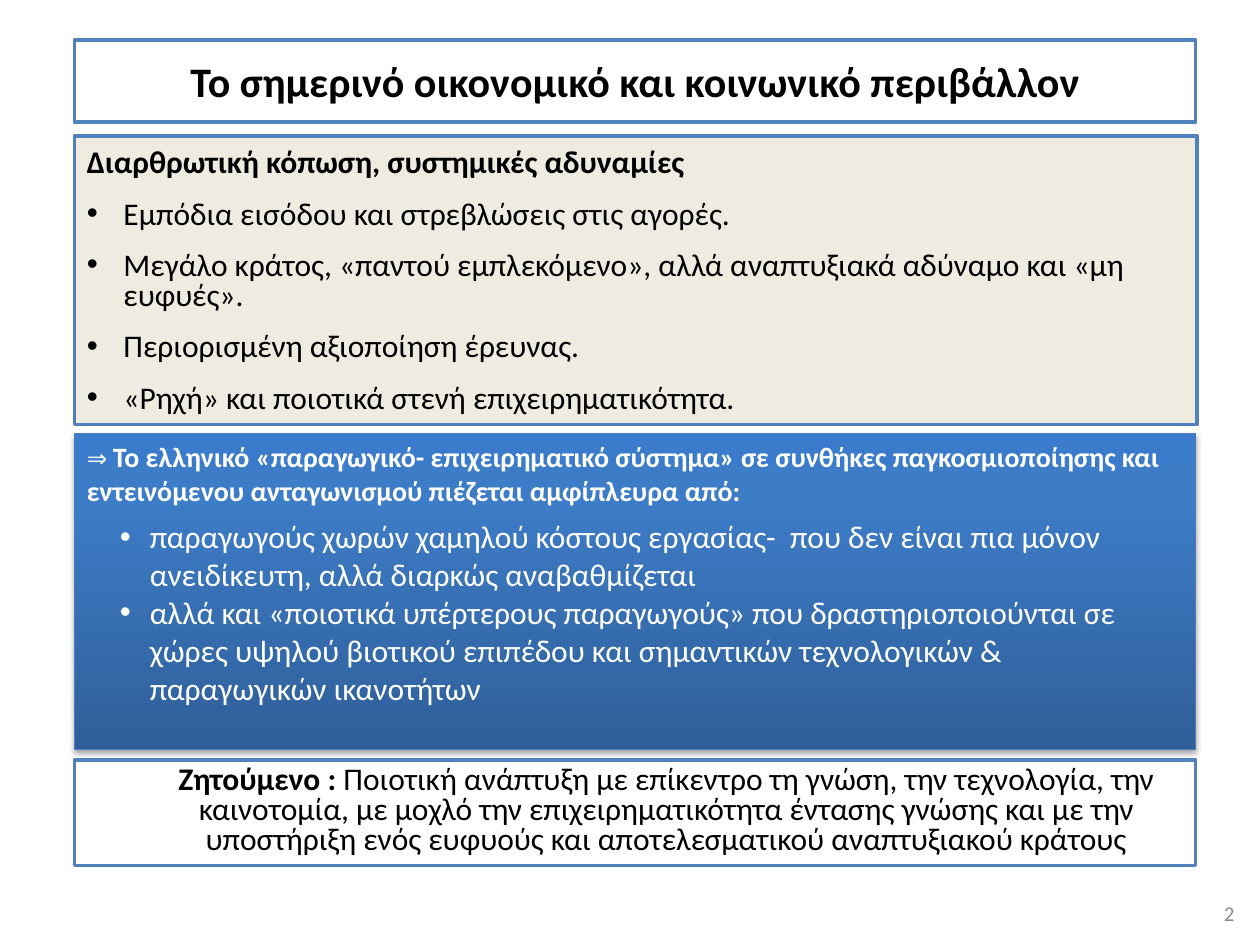
from copy import deepcopy

from lxml.etree import SubElement
from pptx import Presentation
from pptx.dml.color import RGBColor
from pptx.enum.shapes import MSO_SHAPE
from pptx.enum.text import MSO_ANCHOR, MSO_AUTO_SIZE, PP_ALIGN
from pptx.oxml.ns import qn
from pptx.util import Cm, Pt

LEFT, WIDTH = 1.5, 22.6
SPACED = {"space_before": Pt(6), "space_after": Pt(6)}
TIGHT = {"line_spacing": 0.8}
CENTRED = {"alignment": PP_ALIGN.CENTER}


def color(value):
    return RGBColor.from_string(value)


def set_values(target, values):
    for name, value in values.items():
        setattr(target, name, value)


def place(shape, left, top, width, height):
    set_values(shape, {"left": Cm(left), "top": Cm(top),
                       "width": Cm(width), "height": Cm(height)})


def set_border(shape, line_color, width):
    shape.line.color.rgb = color(line_color)
    shape.line.width = Pt(width)


def set_fill(shape, fill_color):
    shape.fill.solid()
    shape.fill.fore_color.rgb = color(fill_color)


def set_frame(shape, anchor=MSO_ANCHOR.TOP):
    set_values(shape.text_frame, {"word_wrap": True, "vertical_anchor": anchor,
                                  "auto_size": MSO_AUTO_SIZE.NONE})


def add_box(slide, top, height, width=WIDTH):
    shape = slide.shapes.add_shape(MSO_SHAPE.RECTANGLE, Cm(LEFT), Cm(top), Cm(width), Cm(height))
    shape.shadow.inherit = False
    set_frame(shape)
    return shape


def set_gradient(shape, stops, angle):
    shape.fill.gradient()
    shape.fill.gradient_angle = angle
    stop_list = shape._element.spPr.find(".//" + qn("a:gsLst"))
    while len(stop_list) < len(stops):
        stop_list.append(deepcopy(stop_list[0]))
    for stop, (position, value) in zip(shape.fill.gradient_stops, stops):
        stop.position = position
        stop.color.rgb = color(value)


def add_shadow(shape):
    effects = shape._element.spPr.find(qn("a:effectLst"))
    shadow = SubElement(effects, qn("a:outerShdw"), blurRad=str(Pt(3.1)), dist=str(Pt(1.8)),
                        dir="5400000", rotWithShape="0")
    shade = SubElement(shadow, qn("a:srgbClr"), val="000000")
    SubElement(shade, qn("a:alpha"), val="35000")


def add_paragraph(shape, runs, text_color, values, margin=0, indent=0, bullet=False):
    frame = shape.text_frame
    paragraph = frame.paragraphs[0]
    if paragraph.runs:
        paragraph = frame.add_paragraph()
    set_values(paragraph, {"alignment": PP_ALIGN.LEFT, **values})
    properties = paragraph._p.get_or_add_pPr()
    properties.set("marL", str(Cm(margin)))
    properties.set("indent", str(Cm(indent)))
    if bullet:
        SubElement(properties, qn("a:buFont"), typeface="Arial")
        SubElement(properties, qn("a:buChar"), char="•")
    for text, size, bold in runs:
        run = paragraph.add_run()
        run.text = text
        set_values(run.font, {"name": "Calibri", "size": Pt(size), "bold": bold})
        run.font.color.rgb = color(text_color)


def add_title(slide):
    title = slide.shapes.title
    place(title, LEFT, 0.81, WIDTH, 1.65)
    set_fill(title, "FFFFFF")
    set_border(title, "4F81BD", 2)
    set_frame(title, MSO_ANCHOR.MIDDLE)
    add_paragraph(title, [("Το σημερινό οικονομικό και κοινωνικό περιβάλλον", 24, True)],
                  "000000", CENTRED)


def add_weaknesses(slide):
    box = add_box(slide, 2.74, 5.82, 22.63)
    set_fill(box, "EEECE1")
    set_border(box, "4F81BD", 2)
    add_paragraph(box, [("Διαρθρωτική κόπωση, συστημικές αδυναμίες", 18, True)], "000000", SPACED)
    for text in (
        "Εμπόδια εισόδου και στρεβλώσεις στις αγορές.",
        "Μεγάλο κράτος, «παντού εμπλεκόμενο», αλλά αναπτυξιακά αδύναμο και «μη ευφυές».",
        "Περιορισμένη αξιοποίηση έρευνας.",
        "«Ρηχή» και ποιοτικά στενή επιχειρηματικότητα.",
    ):
        add_paragraph(box, [(text, 18, False)], "000000", {**SPACED, **TIGHT}, 0.74, -0.74, True)


def add_pressures(slide):
    box = add_box(slide, 8.74, 6.37)
    set_gradient(box, [(0, "2F5F99"), (0.8, "3D7CC7"), (1, "3A7CCB")], 90)
    set_border(box, "4B7EBC", 0.75)
    add_shadow(box)
    add_paragraph(box, [
        ("⇒ ", 14, False),
        ("Το ελληνικό «παραγωγικό- επιχειρηματικό σύστημα» σε συνθήκες παγκοσμιοποίησης "
         "και εντεινόμενου ανταγωνισμού πιέζεται αμφίπλευρα από:", 16, True),
    ], "FFFFFF", SPACED)
    for text in (
        "παραγωγούς χωρών χαμηλού κόστους εργασίας-  που δεν είναι πια μόνον ανειδίκευτη, "
        "αλλά διαρκώς αναβαθμίζεται",
        "αλλά και «ποιοτικά υπέρτερους παραγωγούς» που δραστηριοποιούνται σε χώρες υψηλού "
        "βιοτικού επιπέδου και σημαντικών τεχνολογικών & παραγωγικών ικανοτήτων",
    ):
        add_paragraph(box, [(text, 18, False)], "FFFFFF", {"level": 2}, 1.27, -0.6, True)


def add_goal(slide):
    box = add_box(slide, 15.32, 2.13)
    set_fill(box, "FFFFFF")
    set_border(box, "4F81BD", 2)
    add_paragraph(box, [
        ("Ζητούμενο : ", 18, True),
        ("Ποιοτική ανάπτυξη με επίκεντρο τη γνώση, την τεχνολογία, την καινοτομία, με μοχλό "
         "την επιχειρηματικότητα έντασης γνώσης και με την υποστήριξη ενός ευφυούς και "
         "αποτελεσματικού αναπτυξιακού κράτους", 18, False),
    ], "000000", {**CENTRED, **TIGHT, "level": 1}, 1.27)


def add_page_number(slide):
    box = slide.shapes.add_textbox(Cm(19.48), Cm(17.78), Cm(5.66), Cm(1.27))
    set_frame(box, MSO_ANCHOR.MIDDLE)
    add_paragraph(box, [("2", 12, False)], "8C8C8C", {"alignment": PP_ALIGN.RIGHT})


def main():
    presentation = Presentation()
    set_values(presentation, {"slide_width": Cm(25.4), "slide_height": Cm(19.05)})
    slide = presentation.slides.add_slide(presentation.slide_layouts[5])
    add_title(slide)
    add_weaknesses(slide)
    add_pressures(slide)
    add_goal(slide)
    add_page_number(slide)
    presentation.save("out.pptx")


if __name__ == "__main__":
    main()
